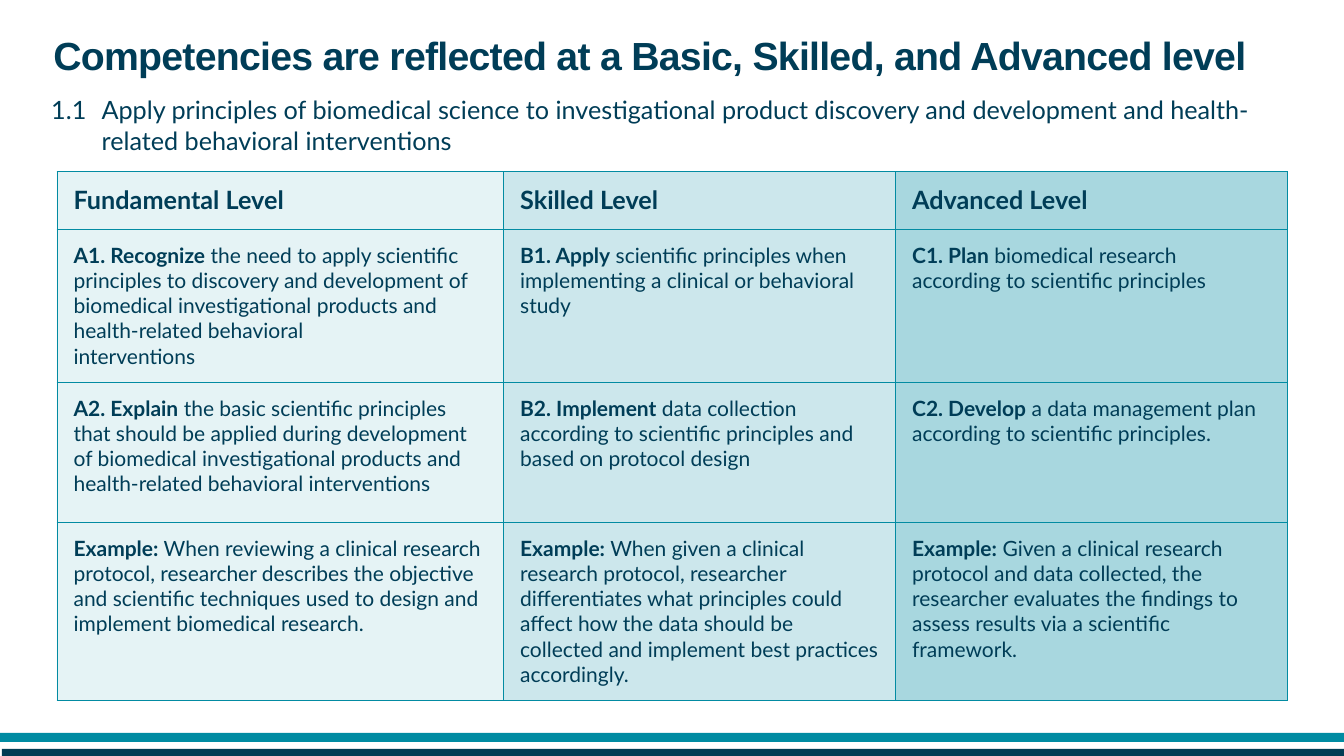
from lxml.etree import SubElement
from pptx import Presentation
from pptx.dml.color import RGBColor
from pptx.enum.shapes import MSO_SHAPE
from pptx.enum.text import MSO_ANCHOR
from pptx.oxml.ns import qn
from pptx.util import Pt

COLOURS = {"ink": "003D57", "navy": "023C54", "bar": "008BA2", "grid": "028BA2"}
COLUMN_WIDTHS = [319, 280, 280]
COLUMN_OPACITIES = [10, 20, 34]
ROW_HEIGHTS = [41.6, 109.2, 100, 127.2]
HEADINGS = ["Fundamental Level", "Skilled Level", "Advanced Level"]
COMPETENCIES = [
    [
        ("A1. Recognize", " the need to apply scientific principles to discovery and development of "
         "biomedical investigational products and health-related behavioral\ninterventions"),
        ("B1. Apply", " scientific principles when implementing a clinical or behavioral study"),
        ("C1. Plan", " biomedical research according to scientific principles"),
    ],
    [
        ("A2. Explain", " the basic scientific principles that should be applied during development "
         "of biomedical investigational products and health-related behavioral interventions"),
        ("B2. Implement", " data collection according to scientific principles and based on "
         "protocol design"),
        ("C2. Develop", " a data management plan according to scientific principles."),
    ],
    [
        ("Example:", " When reviewing a clinical research protocol, researcher describes the "
         "objective and scientific techniques used to design and implement biomedical research."),
        ("Example:", " When given a clinical research protocol, researcher differentiates what "
         "principles could affect how the data should be collected and implement best practices "
         "accordingly."),
        ("Example:", " Given a clinical research protocol and data collected, the researcher "
         "evaluates the findings to assess results via a scientific framework."),
    ],
]


def colour(name):
    return RGBColor.from_string(COLOURS[name])


def set_font(font, name, size, bold=None):
    font.name = name
    font.size = Pt(size)
    font.bold = bold
    font.color.rgb = colour("ink")


def add_bar(page, left, top, width, height, fill):
    bar = page.shapes.add_shape(MSO_SHAPE.RECTANGLE, Pt(left), Pt(top), Pt(width), Pt(height))
    bar.shadow.inherit = False
    bar.fill.solid()
    bar.fill.fore_color.rgb = colour(fill)
    bar.line.fill.background()


def add_text(page, left, top, width, height, anchor):
    box = page.shapes.add_textbox(Pt(left), Pt(top), Pt(width), Pt(height))
    box.text_frame.word_wrap = True
    box.text_frame.vertical_anchor = anchor
    return box.text_frame.paragraphs[0]


def add_title(page, text):
    para = add_text(page, 31, 30, 899, 29.8, MSO_ANCHOR.BOTTOM)
    span = para.add_run()
    span.text = text
    span.font._element.set("spc", "-50")
    set_font(para.font, "Arial", 28, True)


def add_competency(page, number, text):
    para = add_text(page, 29.5, 64, 899, 51, MSO_ANCHOR.TOP)
    para.add_run().text = f"{number}\t{text}"
    properties = para._p.get_or_add_pPr()
    properties.set("marL", str(Pt(36)))
    properties.set("indent", str(Pt(-36)))
    set_font(para.font, "Lato", 18)


def add_spans(para, text, bold):
    for index, line in enumerate(text.split("\n")):
        if index:
            para.add_line_break()
        span = para.add_run()
        span.text = line
        span.font.bold = bold


def style_cell(cell, opacity):
    cell.margin_left = cell.margin_right = Pt(12)
    cell.margin_top = cell.margin_bottom = Pt(9.4)
    properties = cell._tc.get_or_add_tcPr()
    for side in ("lnL", "lnR", "lnT", "lnB"):
        border = SubElement(properties, qn(f"a:{side}"), w=str(Pt(0.5)))
        paint = SubElement(border, qn("a:solidFill"))
        SubElement(paint, qn("a:srgbClr"), val=COLOURS["grid"])
    cell.fill.solid()
    cell.fill.fore_color.rgb = colour("grid")
    tint = properties.find(qn("a:solidFill")).find(qn("a:srgbClr"))
    SubElement(tint, qn("a:alpha"), val=str(opacity * 1000))


def add_level_table(page):
    rows = [[(heading, "") for heading in HEADINGS]] + COMPETENCIES
    table = page.shapes.add_table(
        len(rows), len(HEADINGS), Pt(40.6), Pt(122.4),
        Pt(sum(COLUMN_WIDTHS)), Pt(sum(ROW_HEIGHTS))).table
    table.first_row = table.horz_banding = False
    for column, width in zip(table.columns, COLUMN_WIDTHS):
        column.width = Pt(width)
    for row_index, (row, height) in enumerate(zip(rows, ROW_HEIGHTS)):
        table.rows[row_index].height = Pt(height)
        for column_index, (lead, rest) in enumerate(row):
            cell = table.cell(row_index, column_index)
            style_cell(cell, COLUMN_OPACITIES[column_index])
            para = cell.text_frame.paragraphs[0]
            add_spans(para, lead, True)
            if rest:
                add_spans(para, rest, False)
            set_font(para.font, "Lato", 15 if row_index else 18)


def main():
    deck = Presentation()
    deck.slide_width, deck.slide_height = Pt(960), Pt(540)
    page = deck.slides.add_slide(deck.slide_layouts[6])
    add_bar(page, 1.4, 535, 958.6, 5, "navy")
    add_bar(page, 0, 523.5, 960, 6.5, "bar")
    add_title(page, "Competencies are reflected at a Basic, Skilled, and Advanced level")
    add_level_table(page)
    add_competency(page, "1.1", "Apply principles of biomedical science to investigational product "
                   "discovery and development and health-related behavioral interventions")
    deck.save("out.pptx")


if __name__ == "__main__":
    main()
